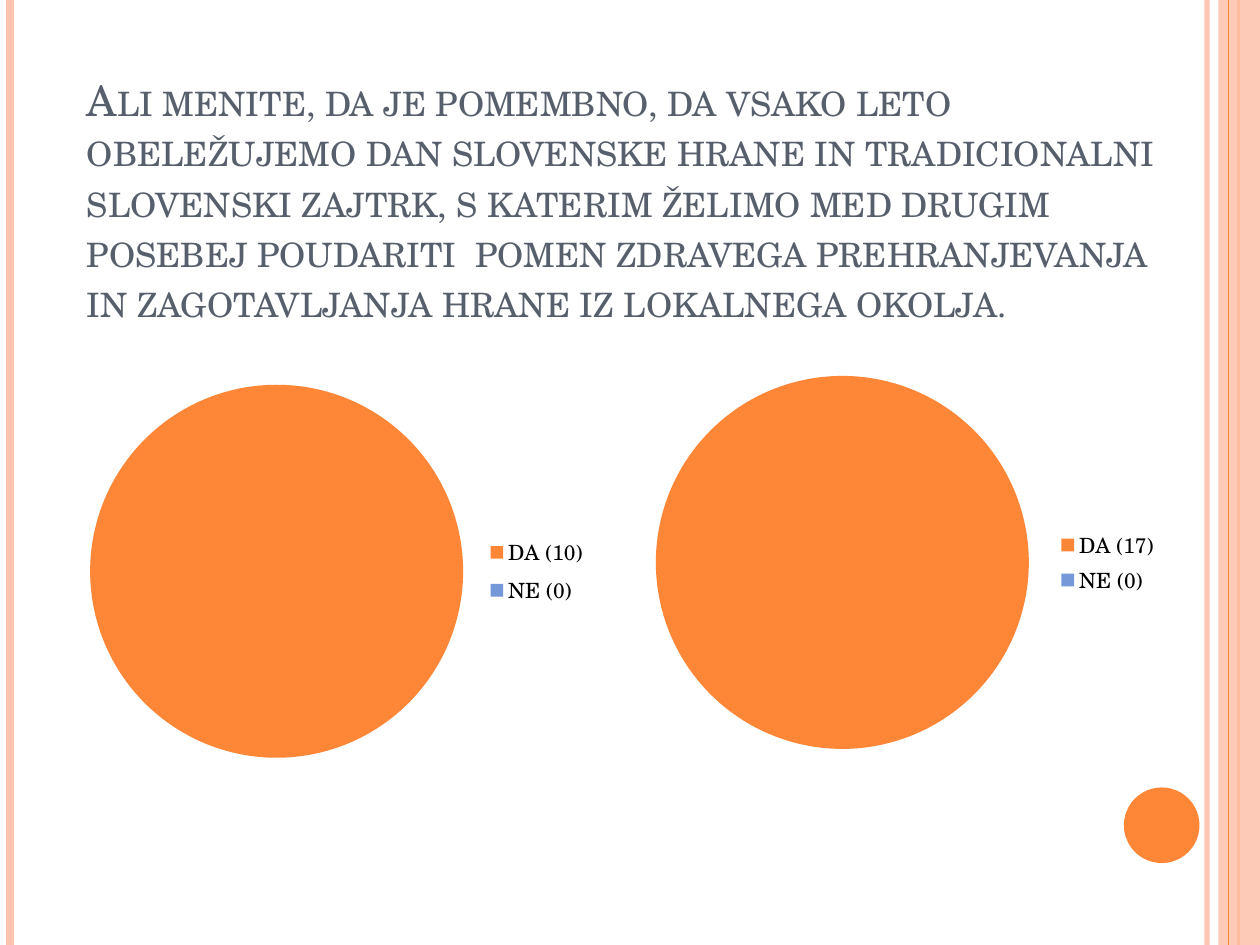
from lxml import etree
from pptx import Presentation
from pptx import util as u
from pptx.chart.data import CategoryChartData
from pptx.dml.color import RGBColor
from pptx.enum import chart as charts, shapes, text
from pptx.oxml import parse_xml
from pptx.oxml.ns import nsdecls, qn

FONT = "TeX Gyre Schola"
ORANGE = RGBColor(0xFE, 0x86, 0x37)
PINK = RGBColor(0xFE, 0xC3, 0xAE)
BLUE = RGBColor(0x75, 0x98, 0xD9)
SLATE = RGBColor(0x57, 0x5F, 0x6D)
BLACK = RGBColor(0, 0, 0)


def write_text(paragraph, content, size, color, font=FONT, caps="none"):
    run = paragraph.add_run()
    run.text = content
    run.font.size = u.Pt(size)
    run.font.name = font
    run.font.color.rgb = color
    run.font._element.set("cap", caps)


def set_alpha(element, percent):
    color = element.find(".//" + qn("a:srgbClr"))
    etree.SubElement(color, qn("a:alpha")).set("val", str(percent * 1000))


presentation = Presentation()
presentation.slide_width = u.Inches(10)
presentation.slide_height = u.Inches(7.5)
slide = presentation.slides.add_slide(presentation.slide_layouts[5])

stripes = [
    (9.58, PINK, 3, 93),
    (0.08, PINK, 4.5, 100),
    (9.83, ORANGE, 1.5, 100),
    (9.75, ORANGE, 0.75, 100),
]
for left, color, width, alpha in stripes:
    stripe = slide.shapes.add_connector(
        shapes.MSO_CONNECTOR.STRAIGHT,
        u.Inches(left), 0, u.Inches(left), presentation.slide_height)
    stripe.line.color.rgb = color
    stripe.line.width = u.Pt(width)
    properties = stripe._element.spPr
    etree.SubElement(properties, qn("a:effectLst"))
    if alpha < 100:
        set_alpha(properties, alpha)

decorations = [
    (shapes.MSO_SHAPE.RECTANGLE, 9.67, 0, 0.33, 7.5, PINK, 87),
    (shapes.MSO_SHAPE.OVAL, 8.92, 6.25, 0.6, 0.6, ORANGE, 100),
]
for kind, left, top, width, height, color, alpha in decorations:
    shape = slide.shapes.add_shape(
        kind, u.Inches(left), u.Inches(top), u.Inches(width), u.Inches(height))
    shape.shadow.inherit = False
    shape.fill.solid()
    shape.fill.fore_color.rgb = color
    shape.line.fill.background()
    if alpha < 100:
        set_alpha(shape._element.spPr, alpha)
        stripe._element.addprevious(shape._element)

title = slide.shapes.title
title.left, title.top = u.Inches(0.59), u.Inches(0.68)
title.width, title.height = u.Inches(9), u.Inches(2.36)
frame = title.text_frame
frame.word_wrap = True
frame.auto_size = text.MSO_AUTO_SIZE.NONE
frame.vertical_anchor = text.MSO_ANCHOR.BOTTOM
frame.margin_bottom = u.Inches(0.45)
question = frame.paragraphs[0]
question.alignment = text.PP_ALIGN.LEFT
write_text(
    question,
    "Ali menite, da je pomembno, da vsako leto obeležujemo dan slovenske hrane "
    "in tradicionalni slovenski zajtrk, s katerim želimo med drugim posebej "
    "poudariti  pomen zdravega prehranjevanja in zagotavljanja hrane iz "
    "lokalnega okolja.",
    size=24, color=SLATE, caps="small")

pies = [
    (0.59, 2.88, "DA (10)", 0.77, 0.4, 0.2),
    (5.08, 2.81, "DA (17)", 0.78, 0.41, 0.18),
]
for left, top, yes_label, legend_left, legend_top, legend_height in pies:
    data = CategoryChartData()
    data.categories = [yes_label, "NE (0)"]
    data.add_series("Series 1", (100, 0))
    chart = slide.shapes.add_chart(
        charts.XL_CHART_TYPE.PIE, u.Inches(left), u.Inches(top),
        u.Inches(4.17), u.Inches(3.31), data).chart
    chart.has_title = False
    chart.font.name = FONT
    chart.font.size = u.Pt(10)
    chart.font.color.rgb = BLACK
    chart.has_legend = True
    legend = chart.legend
    legend.position = charts.XL_LEGEND_POSITION.RIGHT
    legend.include_in_layout = False
    legend.font.size = u.Pt(12)
    legend.font.name = FONT
    legend.font.color.rgb = BLACK

    plot = chart.plots[0]
    plot.vary_by_categories = True
    for index, color in enumerate((ORANGE, BLUE)):
        point = plot.series[0].points[index]
        point.format.fill.solid()
        point.format.fill.fore_color.rgb = color
        point.format.line.fill.background()

    plot_area = chart._chartSpace.chart.plotArea
    areas = [
        (plot_area, '<c:layoutTarget val="inner"/>', 0.03, 0.05, 0.71, 0.9),
        (legend._element, "", legend_left, legend_top, 0.22, legend_height),
    ]
    for area, target, x, y, width, height in areas:
        for old_layout in area.findall(qn("c:layout")):
            area.remove(old_layout)
        layout = parse_xml(
            f'<c:layout {nsdecls("c")}><c:manualLayout>{target}'
            '<c:xMode val="edge"/><c:yMode val="edge"/>'
            f'<c:x val="{x}"/><c:y val="{y}"/>'
            f'<c:w val="{width}"/><c:h val="{height}"/>'
            '</c:manualLayout></c:layout>')
        area.insert(0 if target else 1, layout)

presentation.save("out.pptx")
